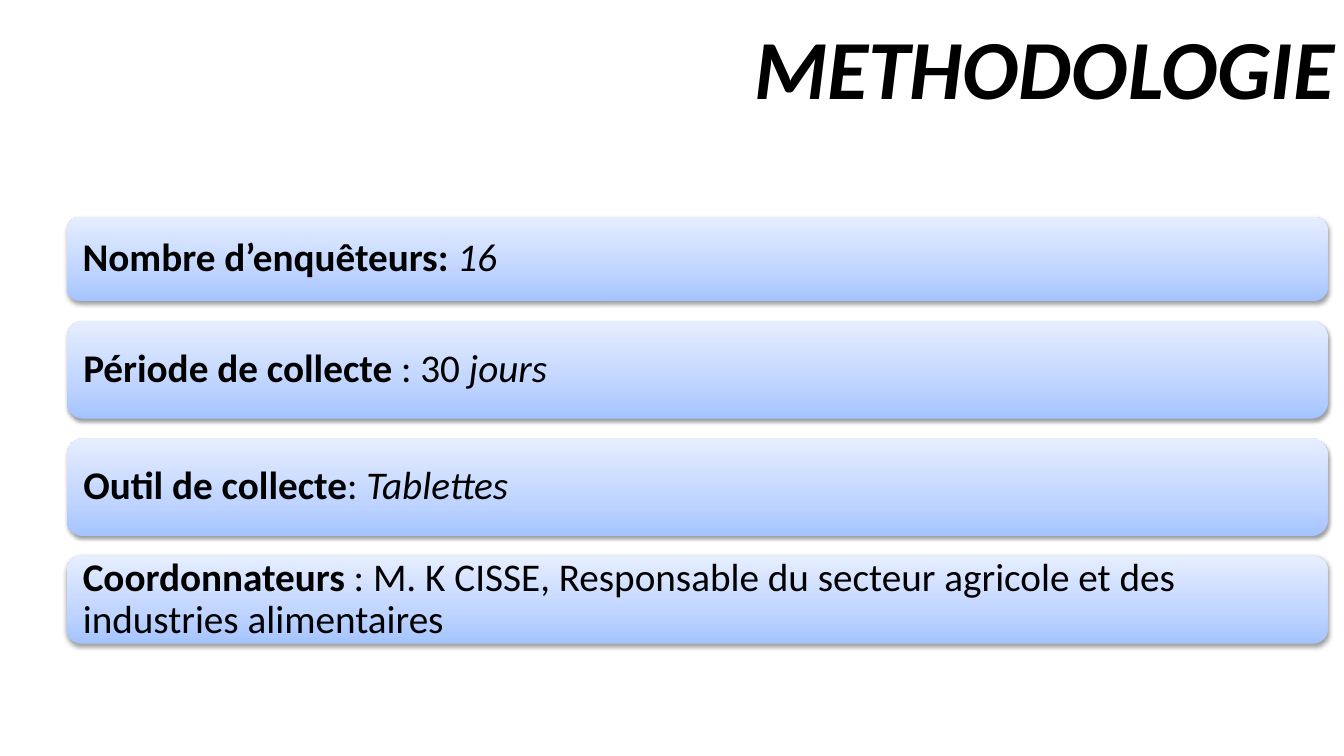
from dataclasses import dataclass

from lxml import etree
from pptx import Presentation
from pptx.dml.color import RGBColor
from pptx.enum.shapes import MSO_SHAPE as Shape
from pptx.enum.text import MSO_ANCHOR as Anchor, PP_ALIGN as Align
from pptx.oxml import parse_xml
from pptx.oxml.ns import nsdecls, qn
from pptx.slide import Slide
from pptx.util import Cm, Pt

BLACK = RGBColor(0x00, 0x00, 0x00)
CARD_STOPS = (
    (0, RGBColor(0xA4, 0xC4, 0xFF)),
    (35, RGBColor(0xBF, 0xD4, 0xFF)),
    (100, RGBColor(0xE6, 0xEE, 0xFF)),
)
FONT = "Calibri"
CARD_LEFT, CARD_TOP, CARD_WIDTH, CARD_GAP = 1.68, 5.46, 31.78, 0.5
CARD_INSET = Cm(0.3)


@dataclass(frozen=True)
class Span:
    text: str
    bold: bool = False
    italic: bool = False


@dataclass(frozen=True)
class Card:
    height: float
    spans: tuple[Span, ...]


CARDS = (
    Card(2.13, (Span("Nombre d’enquêteurs: ", bold=True), Span("16", italic=True))),
    Card(2.46, (Span("Période de collecte ", bold=True), Span(": 30"),
                Span(" jours", italic=True))),
    Card(2.46, (Span("Outil de collecte", bold=True), Span(": "),
                Span("Tablettes", italic=True))),
    Card(2.21, (Span("Coordonnateurs", bold=True),
                Span(" : M. K CISSE, Responsable du secteur agricole"
                     " et des industries alimentaires"))),
)


def gradient_fill() -> etree.ElementBase:
    stops = "".join(
        f'<a:gs pos="{percent * 1000}"><a:srgbClr val="{color}"/></a:gs>'
        for percent, color in CARD_STOPS
    )
    return parse_xml(
        f'<a:gradFill rotWithShape="1" {nsdecls("a")}><a:gsLst>{stops}</a:gsLst>'
        '<a:lin ang="16200000" scaled="0"/></a:gradFill>'
    )


def soft_shadow() -> etree.ElementBase:
    return parse_xml(
        f'<a:outerShdw {nsdecls("a")} blurRad="{Pt(3.1)}" dist="{Pt(1.6)}" '
        'dir="5400000" rotWithShape="0">'
        f'<a:srgbClr val="{BLACK}"><a:alpha val="38000"/></a:srgbClr></a:outerShdw>'
    )


def add_title(page: Slide, text: str) -> None:
    title = page.shapes.title
    title.left, title.top, title.width, title.height = Cm(2.06), Cm(0.1), Cm(31.82), Cm(3.1)
    title.text_frame.text = text
    title.text_frame.vertical_anchor = Anchor.MIDDLE
    para = title.text_frame.paragraphs[0]
    para.alignment = Align.RIGHT
    font = para.font
    font.name, font.size, font.bold, font.italic = FONT, Pt(60), True, True
    font.color.rgb = BLACK


def add_card(page: Slide, card: Card, top: float) -> None:
    box = page.shapes.add_shape(
        Shape.ROUNDED_RECTANGLE, Cm(CARD_LEFT), Cm(top), Cm(CARD_WIDTH), Cm(card.height)
    )
    # Gradient, no outline, soft shadow
    box.line.fill.background()
    box.shadow.inherit = False
    properties = box.element.spPr
    properties.find(qn("a:prstGeom")).addnext(gradient_fill())
    properties.find(qn("a:effectLst")).append(soft_shadow())

    # Label and value
    frame = box.text_frame
    frame.word_wrap = True
    frame.vertical_anchor = Anchor.MIDDLE
    frame.margin_left = frame.margin_right = CARD_INSET
    frame.margin_top = frame.margin_bottom = CARD_INSET
    para = frame.paragraphs[0]
    para.alignment = Align.LEFT
    para.line_spacing = 0.9
    para.font.name, para.font.size = FONT, Pt(28)
    para.font.color.rgb = BLACK
    for span in card.spans:
        run = para.add_run()
        run.text = span.text
        run.font.bold, run.font.italic = span.bold, span.italic


def main() -> None:
    deck = Presentation()
    deck.slide_width, deck.slide_height = Cm(33.87), Cm(19.05)
    page = deck.slides.add_slide(deck.slide_layouts[5])
    add_title(page, "METHODOLOGIE")

    # Cards stacked with equal gaps
    top = CARD_TOP
    for card in CARDS:
        add_card(page, card, top)
        top += card.height + CARD_GAP

    deck.save("out.pptx")


if __name__ == "__main__":
    main()
